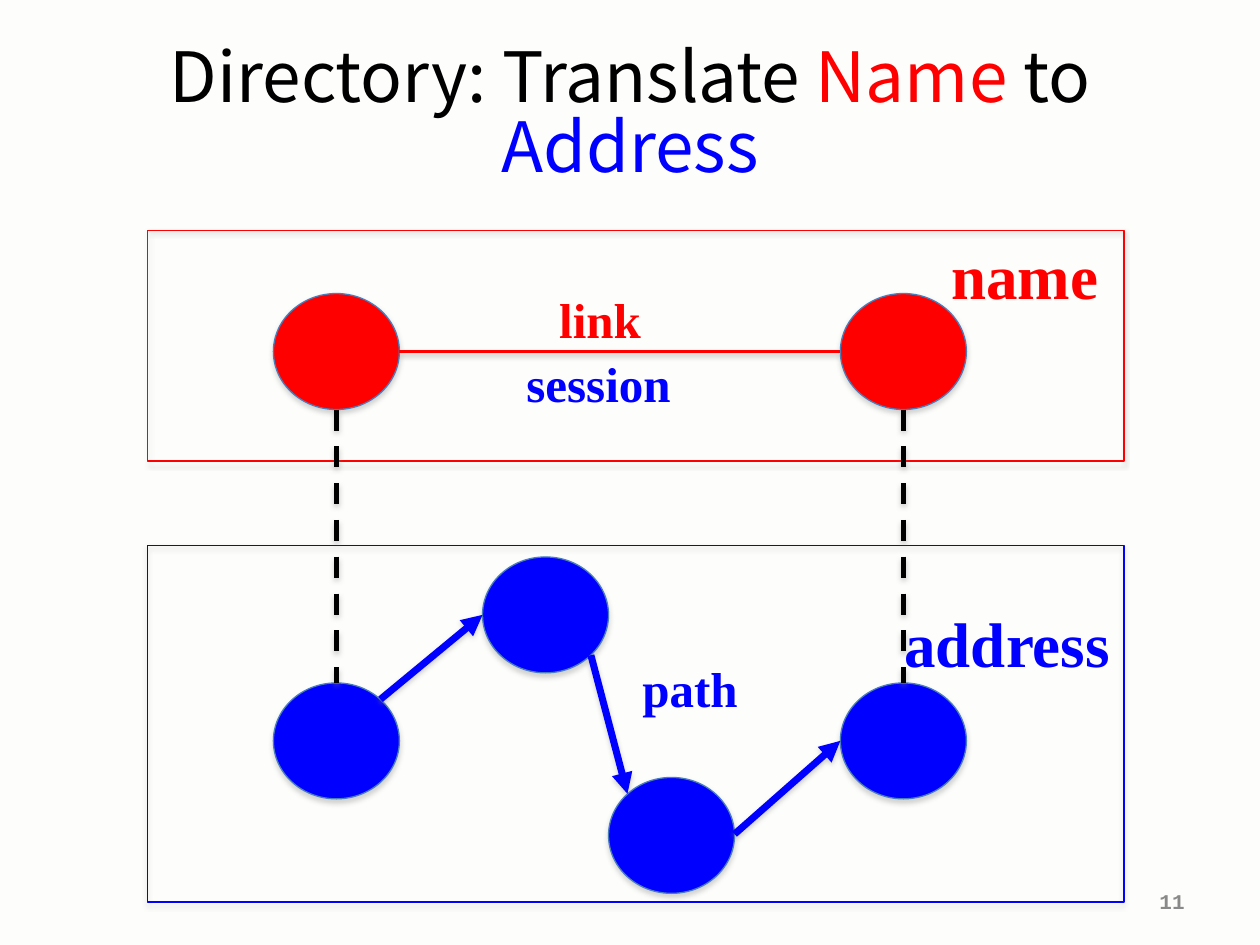
from lxml import etree
from pptx import Presentation
from pptx.dml.color import RGBColor
from pptx.enum.dml import MSO_LINE
from pptx.enum.shapes import MSO_CONNECTOR, MSO_SHAPE
from pptx.enum.text import MSO_ANCHOR, MSO_AUTO_SIZE, PP_ALIGN
from pptx.oxml.ns import qn
from pptx.util import Inches, Pt

RECT, OVAL = MSO_SHAPE.RECTANGLE, MSO_SHAPE.OVAL
STRAIGHT, DASH = MSO_CONNECTOR.STRAIGHT, MSO_LINE.DASH
MIDDLE, TOP = MSO_ANCHOR.MIDDLE, MSO_ANCHOR.TOP
LEFT, CENTER, RIGHT = PP_ALIGN.LEFT, PP_ALIGN.CENTER, PP_ALIGN.RIGHT
NO_FIT = MSO_AUTO_SIZE.NONE

RED, BLUE, BLACK = "FF0000", "0000FF", "000000"
OUTLINE, GRAY, PAPER = "4A7EBB", "898989", "FDFDFC"
SERIF, SANS, MONO = "Times New Roman", "Noto Sans CJK JP", "Courier New"
NODE_W, NODE_H = 1, 0.92
NODE_X = (1, 5.5)  # the two end nodes, from the left of a layer


def rgb(color):
    return RGBColor.from_string(color)


def add_shadow(s, alpha, dist):
    effects = etree.SubElement(s._element.spPr, qn("a:effectLst"))
    shadow = etree.SubElement(effects, qn("a:outerShdw"), blurRad=str(Pt(3.1)),
                              dist=str(Pt(dist)), dir="5400000", rotWithShape="0")
    color = etree.SubElement(shadow, qn("a:srgbClr"), val="808080")
    etree.SubElement(color, qn("a:alpha"), val=str(alpha * 1000))


def add_run(p, text, size, font, color, bold=False):
    r = p.add_run()
    r.text = text
    r.font.size, r.font.name, r.font.bold = Pt(size), font, bold
    r.font.color.rgb = rgb(color)


def add_text(slide, text, x, y, w, h, size=28, font=SERIF, color=BLACK,
             align=LEFT, anchor=TOP, wrap=False):
    tf = slide.shapes.add_textbox(Inches(x), Inches(y), Inches(w), Inches(h)).text_frame
    tf.word_wrap, tf.vertical_anchor = wrap, anchor
    tf.paragraphs[0].alignment = align
    add_run(tf.paragraphs[0], text, size, font, color, bold=True)


def add_box(slide, kind, x, y, w, h, line, fill=None):
    s = slide.shapes.add_shape(kind, Inches(x), Inches(y), Inches(w), Inches(h))
    if fill:
        s.fill.solid()
        s.fill.fore_color.rgb = rgb(fill)
    else:
        s.fill.background()
    s.line.color.rgb = rgb(line)
    s.line.width = Pt(0.75)
    add_shadow(s, 35, 1.8)


def add_line(slide, start, end, color, width, dash=None, arrow=False):
    s = slide.shapes.add_connector(STRAIGHT, *(Inches(v) for v in (*start, *end)))
    s.line.color.rgb = rgb(color)
    s.line.width = Pt(width)
    if dash:
        s.line.dash_style = dash
    if arrow:
        etree.SubElement(s.line._get_or_add_ln(), qn("a:tailEnd"), type="triangle")
    add_shadow(s, 38, 1.6)


def add_layer(slide, box, color, nodes):
    """Frame with its nodes, given as offsets from the frame's corner."""
    x, y, w, h = box
    for dx, dy in nodes:
        add_box(slide, OVAL, x + dx, y + dy, NODE_W, NODE_H, OUTLINE, color)
    add_box(slide, RECT, x, y, w, h, color)


def add_name_layer(slide, box):
    x, y, _, _ = box
    add_layer(slide, box, RED, [(dx, 0.5) for dx in NODE_X])
    link_y = y + 0.5 + NODE_H / 2
    add_line(slide, (x + NODE_X[0] + NODE_W, link_y), (x + NODE_X[1], link_y), RED, 2)
    add_text(slide, "link", x + 3.17, y + 0.42, 0.86, 0.57, color=RED)
    add_text(slide, "session", x + 2.91, y + 0.93, 1.36, 0.57, color=BLUE)
    add_text(slide, "name", x + 6.28, y, 1.38, 0.71, size=36, color=RED)


def add_address_layer(slide, box):
    x, y, _, _ = box
    ends = [(dx, 1.09) for dx in NODE_X]
    add_layer(slide, box, BLUE, [*ends, (2.66, 0.09), (3.66, 1.84)])
    hops = [((1.85, 1.22), (2.66, 0.55)),
            ((3.52, 0.87), (3.81, 1.97)),
            ((4.66, 2.29), (5.5, 1.55))]
    for (x1, y1), (x2, y2) in hops:
        add_line(slide, (x + x1, y + y1), (x + x2, y + y2), BLUE, 4, arrow=True)
    add_text(slide, "path", x + 3.83, y + 0.85, 0.97, 0.57, color=BLUE)
    add_text(slide, "address", x + 5.91, y + 0.42, 1.85, 0.71, size=36, color=BLUE)


def add_mappings(slide, x, top, bottom):
    """Dashed lines from each name down to its address."""
    for dx in NODE_X:
        center = x + dx + NODE_W / 2
        add_line(slide, (center, top), (center, bottom), BLACK, 3, dash=DASH)


def set_title(slide, x, y, w, h, parts):
    s = slide.shapes.title
    s.left, s.top, s.width, s.height = (Inches(v) for v in (x, y, w, h))
    tf = s.text_frame
    tf.auto_size, tf.word_wrap, tf.vertical_anchor = NO_FIT, True, MIDDLE
    p = tf.paragraphs[0]
    p.alignment, p.line_spacing = CENTER, 0.84
    for text, color in parts:
        add_run(p, text, 39.6, SANS, color)


def main():
    prs = Presentation()
    prs.slide_width, prs.slide_height = Inches(10), Inches(7.5)
    slide = prs.slides.add_slide(prs.slide_layouts[5])
    slide.background.fill.solid()
    slide.background.fill.fore_color.rgb = rgb(PAPER)

    set_title(slide, 0.5, 0.3, 9, 1.25,
              [("Directory: Translate ", BLACK), ("Name ", RED),
               ("to ", BLACK), ("Address", BLUE)])
    add_name_layer(slide, (1.17, 1.83, 7.75, 1.83))
    add_address_layer(slide, (1.17, 4.33, 7.75, 2.83))
    add_mappings(slide, 1.17, 3.25, 5.42)
    add_text(slide, "11", 9.09, 6.95, 0.41, 0.4, size=12, font=MONO, color=GRAY,
             align=RIGHT, anchor=MIDDLE, wrap=True)
    prs.save("out.pptx")


if __name__ == "__main__":
    main()
